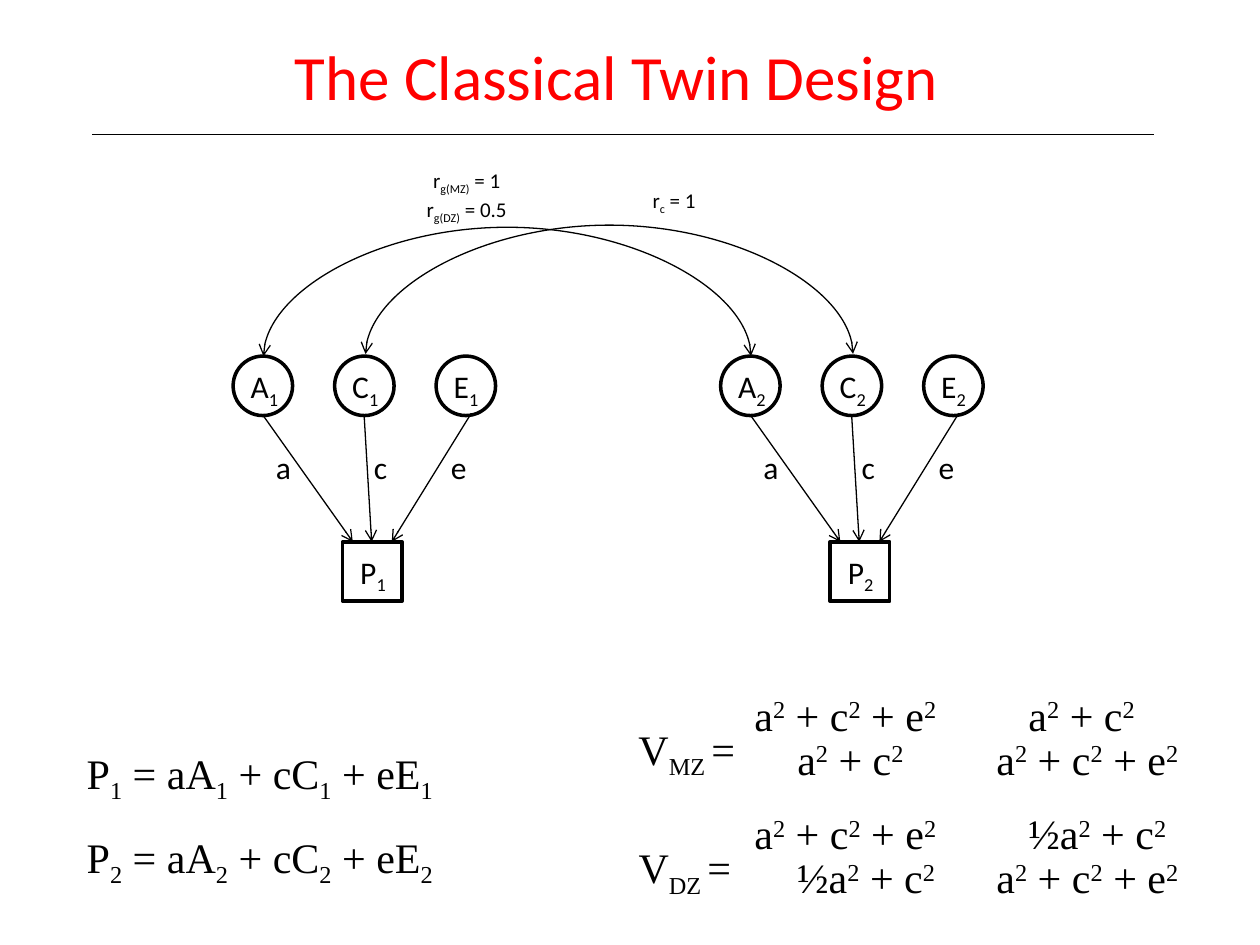
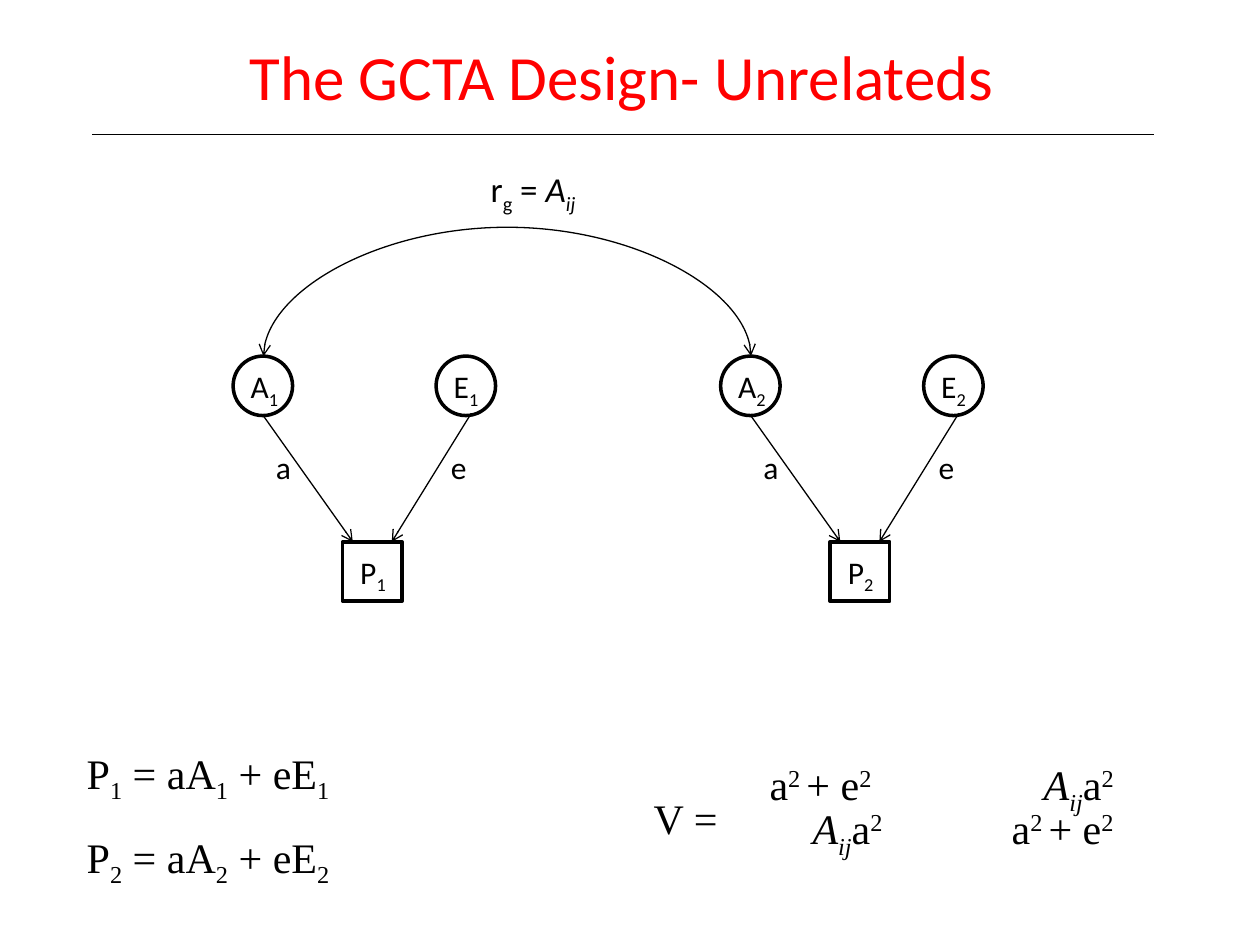
from itertools import groupby

from lxml.etree import SubElement
from pptx import Presentation
from pptx.dml.color import RGBColor
from pptx.enum.shapes import MSO_CONNECTOR, MSO_SHAPE
from pptx.enum.text import MSO_ANCHOR, MSO_AUTO_SIZE, PP_ALIGN
from pptx.oxml.ns import qn
from pptx.util import Pt

BLACK, RED = "000000", "FF0000"
SANS, SERIF = "Calibri", "Times New Roman"
BASELINES = {"_": -25000, "^": 30000}
FRAME = {
    "word_wrap": False,
    "auto_size": MSO_AUTO_SIZE.SHAPE_TO_FIT_TEXT,
    "vertical_anchor": MSO_ANCHOR.TOP,
}
TWIN_LEFT, TWIN_GAP, NODE = 133.2, 278.6, 34
FACTOR_TOP, TRAIT_TOP, TRAIT_SHIFT = 203.5, 309.6, 62.6
FACTOR_SHIFT = {"A": 0, "C": 58, "E": 116}
PATHS = {
    "A": (17.3, 237.6, 68.4, 17.3),
    "C": (74.9, 237.6, 79.2, 73.4),
    "E": (136.1, 236.2, 90.7, 117.4),
}


def colour(code):
    return RGBColor.from_string(code)


def marked_runs(markup):
    baseline, italic, letters = 0, False, []
    for letter in markup:
        if letter in BASELINES:
            baseline = 0 if baseline else BASELINES[letter]
        elif letter == "*":
            italic = not italic
        else:
            letters.append((letter, baseline, italic))
    for (baseline, italic), group in groupby(letters, key=lambda item: item[1:]):
        yield "".join(item[0] for item in group), baseline, italic


class Deck:
    def __init__(self):
        self.presentation = Presentation()
        self.presentation.slide_width = Pt(720)
        self.presentation.slide_height = Pt(540)
        self.slide = None

    def new_slide(self, heading, left, width):
        self.slide = self.presentation.slides.add_slide(self.presentation.slide_layouts[5])
        title = self.slide.shapes.title
        place = {"left": left, "top": 18, "width": width, "height": 51}
        for side, length in place.items():
            setattr(title, side, Pt(length))
        self.fill_frame(title.text_frame, [heading], 36, SANS, RED)
        self.line(52.6, 77, 659.5, 77)

    def fill_frame(self, frame, lines, size, face, tint=BLACK, align=PP_ALIGN.LEFT):
        for name, setting in FRAME.items():
            setattr(frame, name, setting)
        for index, markup in enumerate(lines):
            paragraph = frame.add_paragraph() if index else frame.paragraphs[0]
            paragraph.alignment = align
            for words, baseline, italic in marked_runs(markup):
                run = paragraph.add_run()
                run.text = words
                style = {"size": Pt(size), "name": face, "italic": italic or None}
                for name, setting in style.items():
                    setattr(run.font, name, setting)
                run.font.color.rgb = colour(tint)
                if baseline:
                    run._r.get_or_add_rPr().set("baseline", str(baseline))

    def text(self, left, top, width, height, *lines, size=18, face=SANS, align=PP_ALIGN.LEFT):
        box = self.slide.shapes.add_textbox(Pt(left), Pt(top), Pt(width), Pt(height))
        self.fill_frame(box.text_frame, lines, size, face, align=align)

    def formula(self, left, top, width, markup):
        self.text(left, top, width, 36.4, markup, size=24, face=SERIF)

    def node(self, kind, left, top, markup):
        outline = self.slide.shapes.add_shape(kind, Pt(left), Pt(top), Pt(NODE), Pt(NODE))
        outline.shadow.inherit = False
        outline.fill.background()
        outline.line.color.rgb = colour(BLACK)
        outline.line.width = Pt(2)
        self.text(left + 3, top + 2.6, 33.4, 29, markup)

    def line(self, x1, y1, x2, y2, kind=MSO_CONNECTOR.STRAIGHT, ends=()):
        link = self.slide.shapes.add_connector(kind, Pt(x1), Pt(y1), Pt(x2), Pt(y2))
        link.line.color.rgb = colour(BLACK)
        link.line.width = Pt(0.75)
        properties = link.element.spPr
        for end in ends:
            SubElement(properties.find(qn("a:ln")), qn(end), type="arrow")
        SubElement(properties, qn("a:effectLst"))
        return link

    def correlation(self, left, top):
        middle, half, depth = left + TWIN_GAP / 2, TWIN_GAP / 2, 0.13
        arc = self.line(middle + depth, top + half, middle, top - half,
                        MSO_CONNECTOR.CURVE, ("a:headEnd", "a:tailEnd"))
        properties = arc.element.spPr
        properties.find(qn("a:xfrm")).set("rot", "5400000")
        adjustments = properties.find(qn("a:prstGeom")).find(qn("a:avLst"))
        SubElement(adjustments, qn("a:gd"), name="adj1", fmla="val 52000000")

    def twin(self, number, factors):
        left = TWIN_LEFT + (number - 1) * TWIN_GAP
        for factor in factors:
            self.node(MSO_SHAPE.OVAL, left + FACTOR_SHIFT[factor], FACTOR_TOP, f"{factor}_{number}_")
        self.node(MSO_SHAPE.RECTANGLE, left + TRAIT_SHIFT, TRAIT_TOP, f"P_{number}_")
        for factor in factors:
            start, top, end, label = PATHS[factor]
            self.line(left + start, top, left + end, TRAIT_TOP, ends=("a:tailEnd",))
            self.text(left + label, 252.7, 24.4, 29, factor.lower())

    def twin_pair(self, factors, equation_width):
        for number in (1, 2):
            self.twin(number, factors)
            terms = " + ".join(f"{factor.lower()}{factor}_{number}_" for factor in factors)
            self.formula(42.5, 423.4 + (number - 1) * 48.2, equation_width, f"P_{number}_ = {terms}")
        self.correlation(150.5, 203.5)

    def covariance(self, left, top, label, variance, shared):
        upper, lower = top - 19.4, top + 5.8
        self.formula(left, top, *label)
        self.formula(left + 66.2, upper, *variance)
        self.formula(left + 222.8, upper, *shared)
        self.formula(left + 90.7, lower, *shared)
        self.formula(left + 204.5, lower, *variance)


def classical_twin(deck):
    deck.new_slide("The Classical Twin Design", 161.3, 385.9)
    deck.twin_pair("ACE", 228.2)
    deck.correlation(208.8, 202.3)
    deck.text(231.8, 92.2, 69.8, 36.7, "r_g(MZ)_ = 1", "r_g(DZ)_ = 0.5",
              size=12, align=PP_ALIGN.CENTER)
    deck.text(363.6, 103.7, 43.2, 21.6, "r_c_ = 1", size=12, align=PP_ALIGN.CENTER)
    variance = (132.5, "a^2^ + c^2^ + e^2^")
    deck.covariance(357.8, 409.7, (82.1, "V_MZ _="), variance, (77.8, "a^2^ + c^2^"))
    deck.covariance(357.8, 477.4, (78.5, "V_DZ _="), variance, (95.8, "½a^2^ + c^2^"))


def gcta_unrelateds(deck):
    deck.new_slide("The GCTA Design- Unrelateds", 135.4, 443.5)
    deck.twin_pair("AE", 169.9)
    deck.text(272.2, 92.2, 64.8, 31.7, "r_g_ = *A_ij_*", size=20, align=PP_ALIGN.CENTER)
    deck.covariance(366.5, 449.3, (57.6, "V ="), (84.2, "a^2 ^+ e^2^"), (56.9, "*A_ij_*a^2^"))


def main():
    deck = Deck()
    classical_twin(deck)
    gcta_unrelateds(deck)
    deck.presentation.save("out.pptx")


if __name__ == "__main__":
    main()
